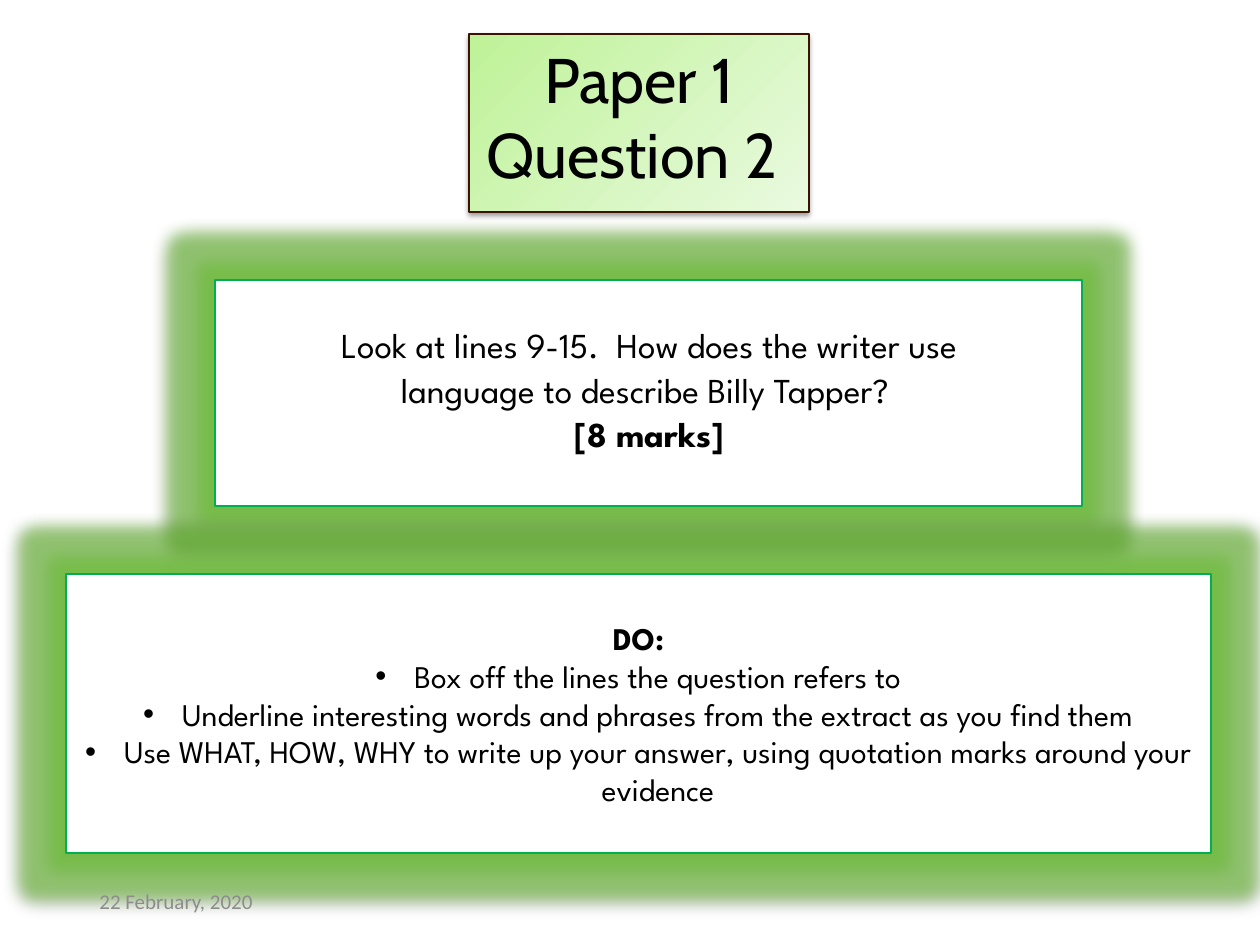
from dataclasses import dataclass

from lxml.etree import SubElement
from pptx import Presentation
from pptx.dml.color import RGBColor
from pptx.enum.shapes import MSO_SHAPE
from pptx.enum.text import MSO_ANCHOR, PP_ALIGN
from pptx.oxml.ns import qn
from pptx.util import Emu, Pt

PX_PER_INCH = 126
BLACK, GREEN = "000000", "00B050"
GLOW = "6EC038"
SPARTAN = "League Spartan"


@dataclass(frozen=True)
class Box:
    left: int
    top: int
    width: int
    height: int


@dataclass(frozen=True)
class Line:
    text: str
    bold: bool = False
    bullet: bool = False


@dataclass(frozen=True)
class Style:
    font: str
    size: int
    color: str = BLACK
    align: PP_ALIGN = PP_ALIGN.CENTER
    anchor: MSO_ANCHOR = MSO_ANCHOR.TOP
    spacing: float = 1.0


def px(value: int) -> Emu:
    return Emu(round(value * 914400 / PX_PER_INCH))


def rgb(color: str) -> RGBColor:
    return RGBColor.from_string(color)


def place(box: Box) -> tuple:
    return px(box.left), px(box.top), px(box.width), px(box.height)


def add_effect(effects, kind: str, color: str, alpha: int, **lengths: int) -> None:
    effect = SubElement(effects, qn(f"a:{kind}"),
                        {name: str(value) for name, value in lengths.items()})
    tint = SubElement(effect, qn("a:srgbClr"), val=color)
    SubElement(tint, qn("a:alpha"), val=str(alpha * 1000))


def add_panel(slide, box: Box, outline: str, fills: tuple, glow: bool):
    """Draw a shadowed rectangle; two fill colours make a diagonal gradient."""
    panel = slide.shapes.add_shape(MSO_SHAPE.RECTANGLE, *place(box))
    if len(fills) == 1:
        panel.fill.solid()
        panel.fill.fore_color.rgb = rgb(fills[0])
    else:
        panel.fill.gradient()
        panel.fill.gradient_angle = 315
        for stop, color in zip(panel.fill.gradient_stops, fills):
            stop.color.rgb = rgb(color)
    panel.line.color.rgb = rgb(outline)
    panel.line.width = Pt(0.75)
    panel.shadow.inherit = False
    effects = panel.element.spPr.find(qn("a:effectLst"))
    if glow:
        add_effect(effects, "glow", GLOW, 60, rad=Pt(18))
    add_effect(effects, "outerShdw", BLACK, 38,
               blurRad=Pt(3.1), dist=Pt(1.6), dir=5400000, rotWithShape=0)
    return panel


def add_bullet(paragraph) -> None:
    properties = paragraph._p.get_or_add_pPr()
    indent = px(39)
    properties.set("marL", str(indent))
    properties.set("indent", str(-indent))
    SubElement(properties, qn("a:buFont"), typeface="Arial")
    SubElement(properties, qn("a:buChar"), char="•")


def write(shape, lines: list[Line], style: Style) -> None:
    frame = shape.text_frame
    frame.word_wrap = True
    frame.vertical_anchor = style.anchor
    for index, line in enumerate(lines):
        paragraph = frame.add_paragraph() if index else frame.paragraphs[0]
        paragraph.alignment = style.align
        paragraph.line_spacing = style.spacing
        if line.bullet:
            add_bullet(paragraph)
        run = paragraph.add_run()
        run.text = line.text
        run.font.name = style.font
        run.font.size = Pt(style.size)
        run.font.bold = line.bold
        run.font.color.rgb = rgb(style.color)


def main() -> None:
    deck = Presentation()
    deck.slide_width, deck.slide_height = px(1260), px(945)
    slide = deck.slides.add_slide(deck.slide_layouts[6])

    title = add_panel(slide, Box(469, 34, 340, 178), "3C1301",
                      ("BEF297", "EAFAE0"), glow=False)
    write(title, [Line("Paper 1"), Line("Question 2 ")], Style("Cabin", 36))

    add_panel(slide, Box(215, 280, 867, 226), GREEN, ("FFFFFF",), glow=True)
    advice = add_panel(slide, Box(66, 574, 1145, 279), GREEN, ("FFFFFF",), glow=True)
    tips = [
        "Box off the lines the question refers to",
        "Underline interesting words and phrases from the extract as you find them",
        "Use WHAT, HOW, WHY to write up your answer, using quotation marks "
        "around your evidence",
    ]
    write(advice,
          [Line("DO:", bold=True)] + [Line(tip, bullet=True) for tip in tips],
          Style(SPARTAN, 18, anchor=MSO_ANCHOR.MIDDLE))

    date = slide.shapes.add_textbox(*place(Box(87, 876, 284, 50)))
    write(date, [Line("22 February, 2020")],
          Style("Calibri", 12, "8C8C8C", PP_ALIGN.LEFT, MSO_ANCHOR.MIDDLE))

    question = slide.shapes.add_textbox(*place(Box(305, 314, 689, 226)))
    write(question,
          [Line("Look at lines 9-15.  How does the writer use language "
                "to describe Billy Tapper? "),
           Line("[8 marks]", bold=True)],
          Style(SPARTAN, 20, spacing=1.07))

    deck.save("out.pptx")


if __name__ == "__main__":
    main()
